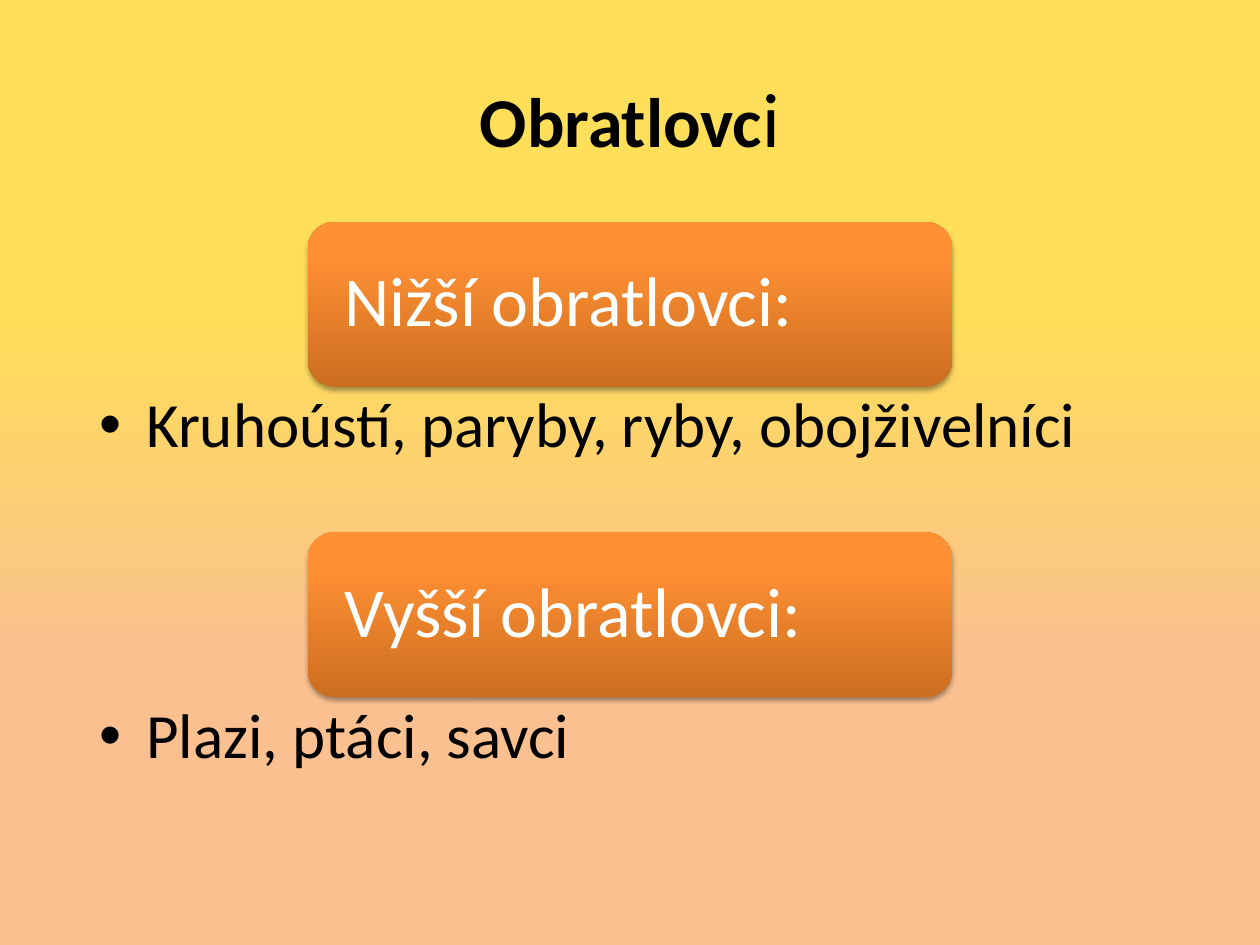
from copy import deepcopy
from dataclasses import dataclass

from pptx import Presentation
from pptx.dml.color import RGBColor
from pptx.enum.shapes import MSO_SHAPE
from pptx.enum.text import MSO_ANCHOR, MSO_AUTO_SIZE, PP_ALIGN
from pptx.oxml import parse_xml
from pptx.oxml.ns import nsdecls, qn
from pptx.util import Cm, Pt


@dataclass(frozen=True)
class Theme:
    font: str = "Calibri"
    ink: str = "000000"
    light: str = "FFFFFF"
    background: tuple = ((0.33, "FFDE59"), (0.71, "FAC090"))
    banner: tuple = ((0, "CC6E20"), (0.8, "FF9034"), (1, "FF9136"))
    title_size: int = 40
    last_letter_size: int = 44
    banner_size: int = 40
    list_size: int = 36


@dataclass(frozen=True)
class Section:
    heading: str
    members: str


THEME = Theme()
SECTIONS = (
    Section("Nižší obratlovci:", "Kruhoústí, paryby, ryby, obojživelníci"),
    Section("Vyšší obratlovci:", "Plazi, ptáci, savci"),
)
MARGIN, CONTENT_WIDTH = Cm(1.27), Cm(22.86)
FIRST_TOP, PITCH = Cm(4.47), Cm(6.26)
BANNER_LEFT, BANNER_WIDTH, BANNER_HEIGHT = Cm(6.2), Cm(13), Cm(3.33)
LIST_HEIGHT = Cm(2.94)


def apply(target, values: dict) -> None:
    for name, value in values.items():
        setattr(target, name, value)


def style_font(font, size: int, color: str, bold: bool = False) -> None:
    apply(font, {"name": THEME.font, "size": Pt(size), "bold": bold})
    font.color.rgb = RGBColor.from_string(color)


def place(shape, left: int, top: int, width: int, height: int) -> None:
    apply(shape, {"left": left, "top": top, "width": width, "height": height})


def fill_gradient(fill, element, stops: tuple, angle: int) -> None:
    fill.gradient()
    fill.gradient_angle = angle
    stop_list = next(element.iter(qn("a:gsLst")))
    while len(stop_list) < len(stops):
        stop_list.append(deepcopy(stop_list[-1]))
    for stop, (position, color) in zip(fill.gradient_stops, stops):
        stop.position = position
        stop.color.rgb = RGBColor.from_string(color)


def add_soft_shadow(shape) -> None:
    shape.shadow.inherit = False
    effects = shape.element.spPr.find(qn("a:effectLst"))
    effects.append(parse_xml(
        f'<a:outerShdw {nsdecls("a")} blurRad="{Pt(3.1)}" dist="{Pt(1.8)}" '
        'dir="5400000" rotWithShape="0"><a:srgbClr val="000000">'
        '<a:alpha val="35000"/></a:srgbClr></a:outerShdw>'))


def draw_banner(slide, heading: str, top: int) -> None:
    banner = slide.shapes.add_shape(MSO_SHAPE.ROUNDED_RECTANGLE, BANNER_LEFT, top,
                                    BANNER_WIDTH, BANNER_HEIGHT)
    fill_gradient(banner.fill, banner.element, THEME.banner, 90)
    banner.line.fill.background()
    add_soft_shadow(banner)
    frame = banner.text_frame
    apply(frame, {"word_wrap": True, "vertical_anchor": MSO_ANCHOR.MIDDLE,
                  "margin_left": Cm(0.59), "margin_right": Cm(0.59)})
    line = frame.paragraphs[0]
    apply(line, {"text": heading, "alignment": PP_ALIGN.LEFT, "line_spacing": 0.9})
    style_font(line.font, THEME.banner_size, THEME.light)


def fill_list(body, members: str, top: int) -> None:
    place(body, MARGIN, top, CONTENT_WIDTH, LIST_HEIGHT)
    frame = body.text_frame
    apply(frame, {"auto_size": MSO_AUTO_SIZE.NONE, "word_wrap": True,
                  "vertical_anchor": MSO_ANCHOR.TOP,
                  "margin_left": Cm(0.73), "margin_right": Cm(0.72),
                  "margin_top": Cm(0.13), "margin_bottom": Cm(0.13)})
    item = frame.paragraphs[0]
    properties = item._p.get_or_add_pPr()
    properties.set("marL", str(Cm(0.95)))
    properties.set("indent", str(-Cm(0.95)))
    properties.append(parse_xml(f'<a:buChar {nsdecls("a")} char="•"/>'))
    apply(item, {"text": members, "line_spacing": 0.9, "space_before": Pt(0)})
    style_font(item.font, THEME.list_size, THEME.ink)


def fill_title(title) -> None:
    place(title, MARGIN, Cm(0.76), CONTENT_WIDTH, Cm(3.18))
    title.text_frame.vertical_anchor = MSO_ANCHOR.MIDDLE
    heading = title.text_frame.paragraphs[0]
    heading.alignment = PP_ALIGN.CENTER
    for text, size, bold in (("Obratlovc", THEME.title_size, True),
                             ("i", THEME.last_letter_size, False)):
        run = heading.add_run()
        run.text = text
        style_font(run.font, size, THEME.ink, bold)


def main() -> None:
    deck = Presentation()
    apply(deck, {"slide_width": Cm(25.4), "slide_height": Cm(19.05)})
    # Two Content layout: one body placeholder per section
    slide = deck.slides.add_slide(deck.slide_layouts[3])
    fill_gradient(slide.background.fill, slide.element, THEME.background, 270)

    # Title
    fill_title(slide.shapes.title)

    # Banner with its list below, once per section
    bodies = list(slide.placeholders)[1:]
    for index, (section, body) in enumerate(zip(SECTIONS, bodies)):
        top = FIRST_TOP + index * PITCH
        draw_banner(slide, section.heading, top)
        fill_list(body, section.members, top + BANNER_HEIGHT)

    deck.save("out.pptx")


if __name__ == "__main__":
    main()
